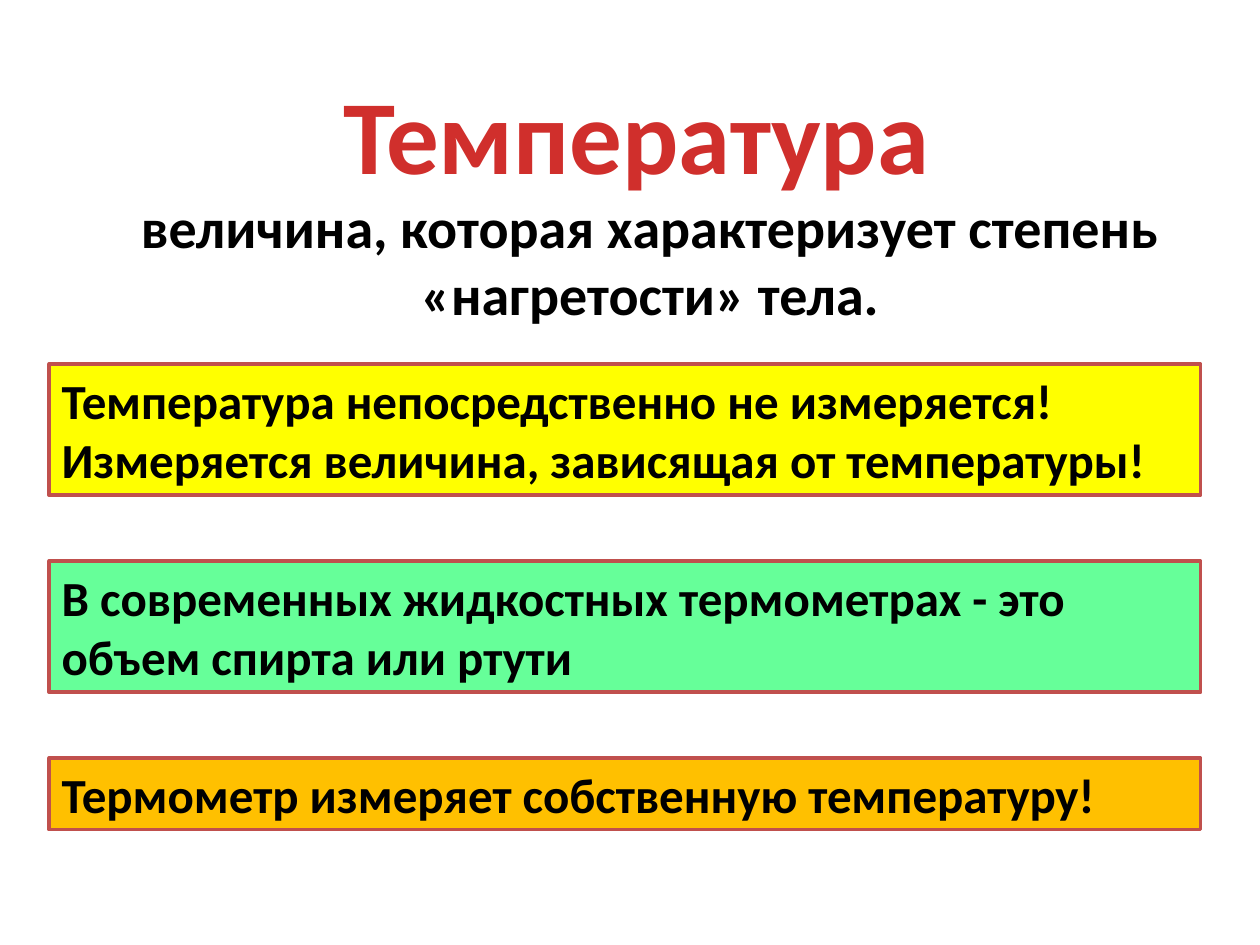
from pptx import Presentation
from pptx.dml.color import RGBColor
from pptx.enum.shapes import MSO_SHAPE as Shape
from pptx.enum.text import MSO_ANCHOR as Anchor, PP_ALIGN as Align
from pptx.util import Pt

COLORS = {
    "text": "000000",
    "title": "D02F2C",
    "border": "C0504D",
    "yellow": "FFFF00",
    "green": "66FF99",
    "orange": "FFC000",
}


def color(name):
    """Return the named colour."""
    return RGBColor.from_string(COLORS[name])


def write(box, text, size, align, ink="text", spacing=None):
    """Fill a box with one bold paragraph."""
    frame = box.text_frame
    frame.word_wrap = True
    frame.vertical_anchor = Anchor.TOP
    para = frame.paragraphs[0]
    para.alignment = align
    if spacing:
        para.line_spacing = spacing
    span = para.add_run()
    span.text = text
    span.font.name = "Calibri"
    span.font.size = Pt(size)
    span.font.bold = True
    span.font.color.rgb = color(ink)


def add_heading(page, left, top, width, height, text, size, **style):
    """Add a centred text box."""
    box = page.shapes.add_textbox(Pt(left), Pt(top), Pt(width), Pt(height))
    write(box, text, size, Align.CENTER, **style)


def add_statement(page, top, height, fill, text):
    """Add a coloured, outlined statement box."""
    box = page.shapes.add_shape(
        Shape.RECTANGLE, Pt(28.1), Pt(top), Pt(658), Pt(height))
    box.shadow.inherit = False
    box.fill.solid()
    box.fill.fore_color.rgb = color(fill)
    box.line.color.rgb = color("border")
    box.line.width = Pt(2)
    write(box, text, 28, Align.LEFT)


def main():
    """Build the temperature slide."""
    deck = Presentation()
    deck.slide_width, deck.slide_height = Pt(720), Pt(540)
    page = deck.slides.add_slide(deck.slide_layouts[6])
    add_heading(page, 33.8, 106.6, 675.4, 85,
                "величина, которая характеризует степень «нагретости» тела.", 32)
    add_heading(page, 39.6, 0, 648, 56, "Температура", 60,
                ink="title", spacing=1.5)
    statements = [
        ("yellow", 75, "Температура непосредственно не измеряется! "
                       "Измеряется величина, зависящая от температуры!"),
        ("green", 75, "В современных жидкостных термометрах - это "
                      "объем спирта или ртути"),
        ("orange", 41, "Термометр измеряет собственную температуру!"),
    ]
    for row, (fill, height, text) in enumerate(statements):
        add_statement(page, 208 + 112.6 * row, height, fill, text)
    deck.save("out.pptx")


if __name__ == "__main__":
    main()
